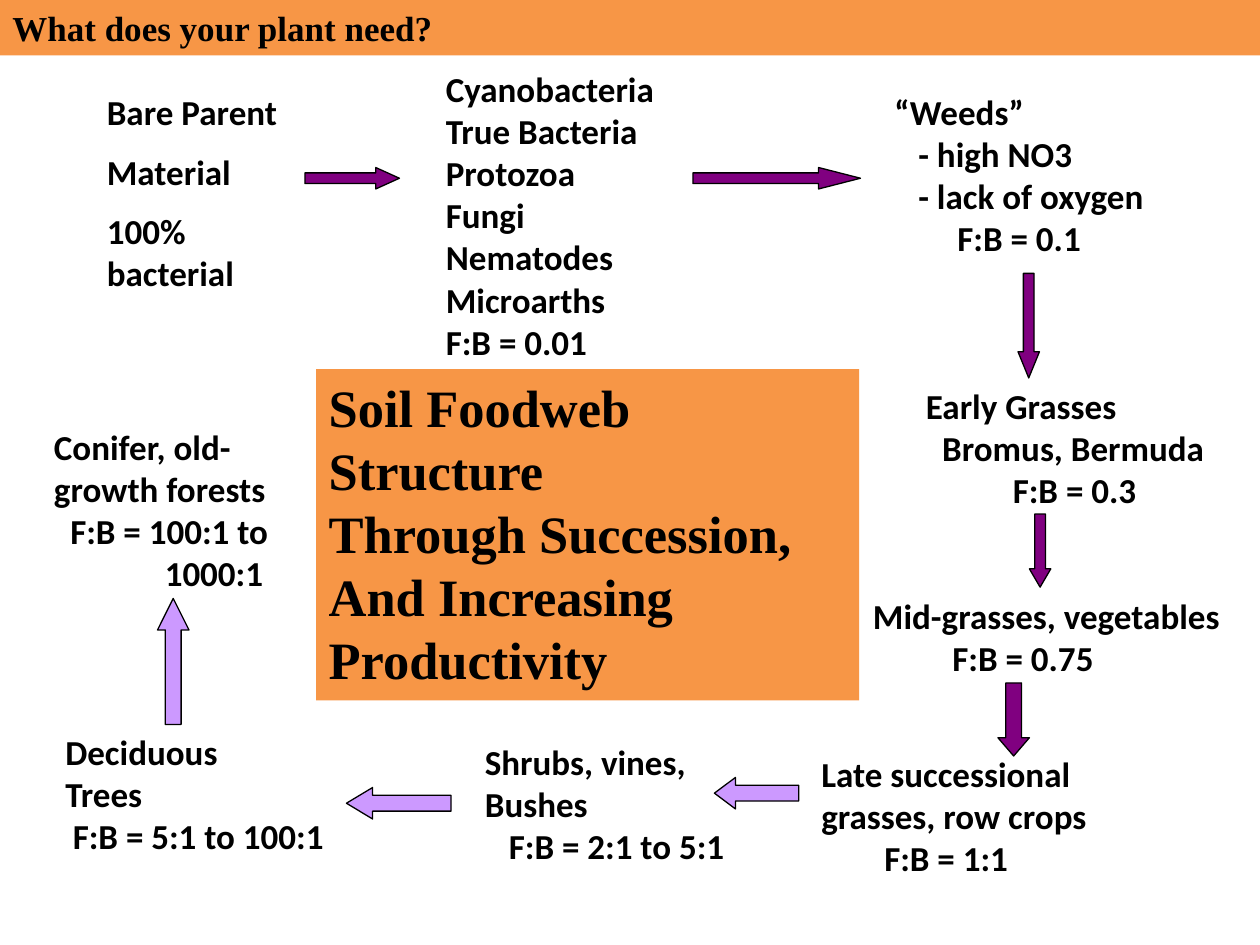
from pptx import Presentation
from pptx.dml.color import RGBColor
from pptx.enum.shapes import MSO_SHAPE
from pptx.enum.text import MSO_ANCHOR, MSO_AUTO_SIZE, PP_ALIGN
from pptx.util import Inches, Pt

BLACK = RGBColor(0x00, 0x00, 0x00)
ORANGE = RGBColor(0xF7, 0x96, 0x46)
PURPLE = RGBColor(0x80, 0x00, 0x80)
LILAC = RGBColor(0xCC, 0x99, 0xFF)

RIGHT, LEFT = MSO_SHAPE.RIGHT_ARROW, MSO_SHAPE.LEFT_ARROW
UP, DOWN = MSO_SHAPE.UP_ARROW, MSO_SHAPE.DOWN_ARROW

# Stages of succession: box, then lines as (indent in inches, text)
STAGES = [
    ((3.44, 0.49, 1.87, 2.46), [
        (0, "Cyanobacteria"), (0, "True Bacteria"), (0, "Protozoa"), (0, "Fungi"),
        (0, "Nematodes"), (0, "Microarths"), (0, "F:B = 0.01")]),
    ((7, 0.67, 2.19, 1.45), [
        (0, "“Weeds”"), (0.19, "- high NO3"), (0.19, "- lack of oxygen"),
        (0.5, "F:B = 0.1")]),
    ((7.25, 3, 2.43, 1.11), [
        (0, "Early Grasses"), (0.13, "Bromus, Bermuda"), (0.69, "F:B = 0.3")]),
    ((6.83, 4.67, 2.98, 0.77), [
        (0, "Mid-grasses, vegetables"), (0.63, "F:B = 0.75")]),
    ((6.42, 5.92, 2.33, 1.11), [
        (0, "Late successional"), (0, "grasses, row crops"), (0.5, "F:B = 1:1")]),
    ((3.75, 5.83, 2.11, 1.11), [
        (0, "Shrubs, vines,"), (0, "Bushes"), (0.19, "F:B = 2:1 to 5:1")]),
    ((0.42, 5.75, 2.27, 1.11), [
        (0, "Deciduous"), (0, "Trees"), (0.06, "F:B = 5:1 to 100:1")]),
    ((0.33, 3.33, 1.97, 1.45), [
        (0, "Conifer, old-"), (0, "growth forests"), (0.13, "F:B = 100:1 to"),
        (0.88, "1000:1")]),
]

# Arrows in order of succession: direction, box, colour
ARROWS = [
    (RIGHT, (2.42, 1.33, 0.75, 0.17), PURPLE),
    (RIGHT, (5.5, 1.33, 1.33, 0.17), PURPLE),
    (DOWN, (8.08, 2.17, 0.17, 0.83), PURPLE),
    (DOWN, (8.17, 4.08, 0.17, 0.58), PURPLE),
    (DOWN, (7.92, 5.42, 0.25, 0.58), PURPLE),
    (LEFT, (5.67, 6.17, 0.67, 0.25), LILAC),
    (LEFT, (2.75, 6.25, 0.83, 0.25), LILAC),
    (UP, (1.25, 4.75, 0.25, 1), LILAC),
]


def to_inches(box):
    return [Inches(value) for value in box]


def write_lines(shape, lines, font_name, size, wrap=True, gap=0):
    frame = shape.text_frame
    frame.word_wrap = wrap
    frame.auto_size = MSO_AUTO_SIZE.SHAPE_TO_FIT_TEXT
    frame.vertical_anchor = MSO_ANCHOR.TOP
    for number, (indent, text) in enumerate(lines):
        paragraph = frame.add_paragraph() if number else frame.paragraphs[0]
        paragraph.text = text
        paragraph.alignment = PP_ALIGN.LEFT
        if indent:
            paragraph._p.get_or_add_pPr().set("marL", str(Inches(indent)))
        if number and gap:
            paragraph.space_before = Pt(gap)
        paragraph.font.name = font_name
        paragraph.font.size = Pt(size)
        paragraph.font.bold = True
        paragraph.font.color.rgb = BLACK


def add_stage(slide, box, lines, wrap=False, gap=0):
    shape = slide.shapes.add_textbox(*to_inches(box))
    write_lines(shape, lines, "Calibri", 20, wrap, gap)


def add_arrow(slide, direction, box, color):
    arrow = slide.shapes.add_shape(direction, *to_inches(box))
    arrow.shadow.inherit = False
    arrow.fill.solid()
    arrow.fill.fore_color.rgb = color
    arrow.line.color.rgb = BLACK
    arrow.line.width = Pt(0.75)
    # The head is a quarter of the length, except on the short wide arrows
    length, thickness = max(box[2:]), min(box[2:])
    arrow.adjustments[0] = 0.5
    arrow.adjustments[1] = length / thickness / 4


def add_banner(slide, box, lines, size):
    banner = slide.shapes.add_shape(MSO_SHAPE.RECTANGLE, *to_inches(box))
    banner.shadow.inherit = False
    banner.fill.solid()
    banner.fill.fore_color.rgb = ORANGE
    banner.line.fill.background()
    write_lines(banner, [(0, line) for line in lines], "Times New Roman", size)


def main():
    presentation = Presentation()
    presentation.slide_width, presentation.slide_height = Inches(10), Inches(7.5)
    slide = presentation.slides.add_slide(presentation.slide_layouts[6])

    # Cycle of stages, starting from bare ground
    add_stage(slide, (0.75, 0.67, 1.67, 1.78),
              [(0, "Bare Parent"), (0, "Material"), (0, "100% bacterial")],
              wrap=True, gap=10)
    for box, lines in STAGES:
        add_stage(slide, box, lines)
    for direction, box, color in ARROWS:
        add_arrow(slide, direction, box, color)

    # Central title and heading bar
    add_banner(slide, (2.51, 2.93, 4.31, 2.63),
               ["Soil Foodweb Structure", "Through Succession,",
                "And Increasing Productivity"], 30)
    add_banner(slide, (0, 0, 10, 0.44), ["What does your plant need?"], 20)

    presentation.save("out.pptx")


if __name__ == "__main__":
    main()
